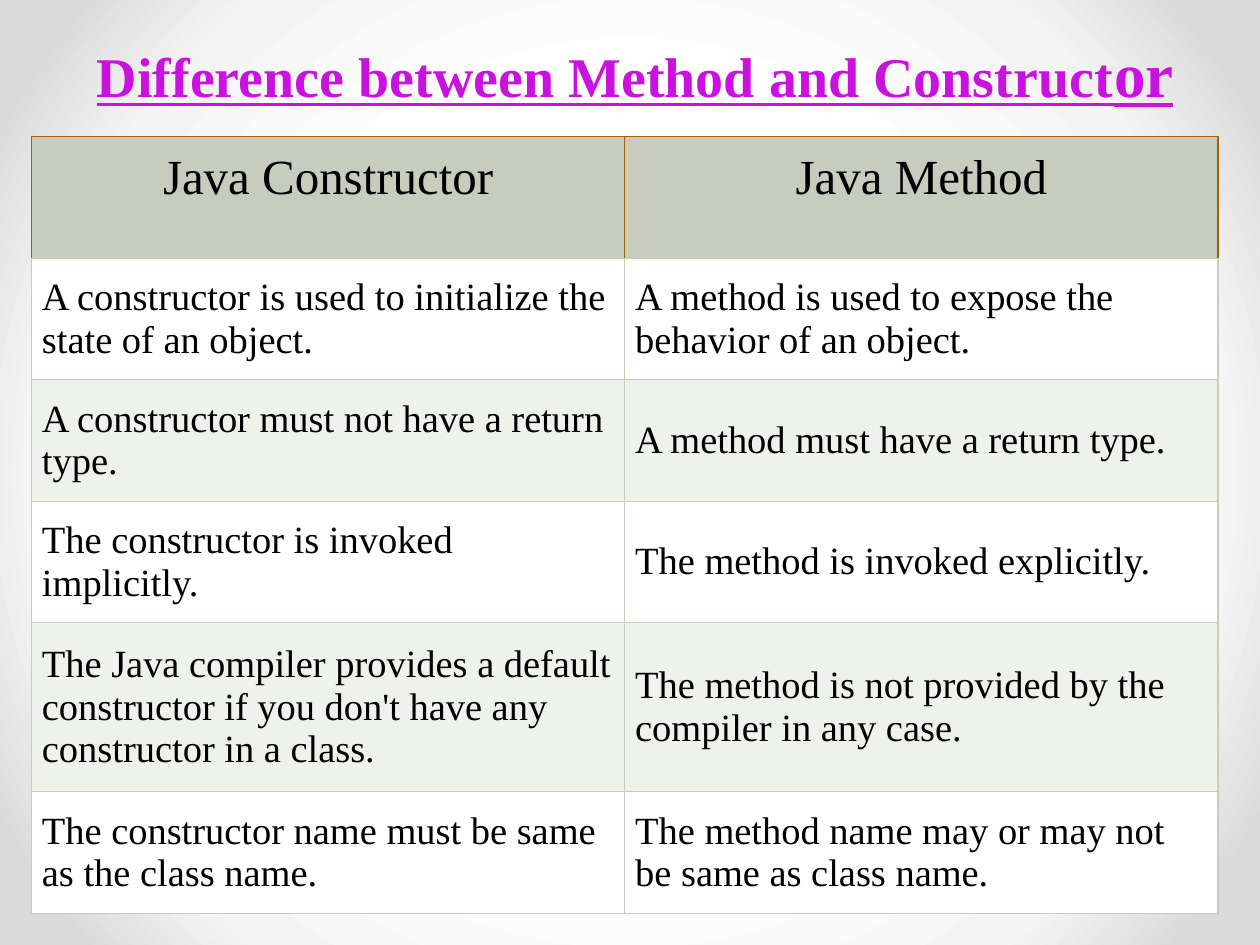
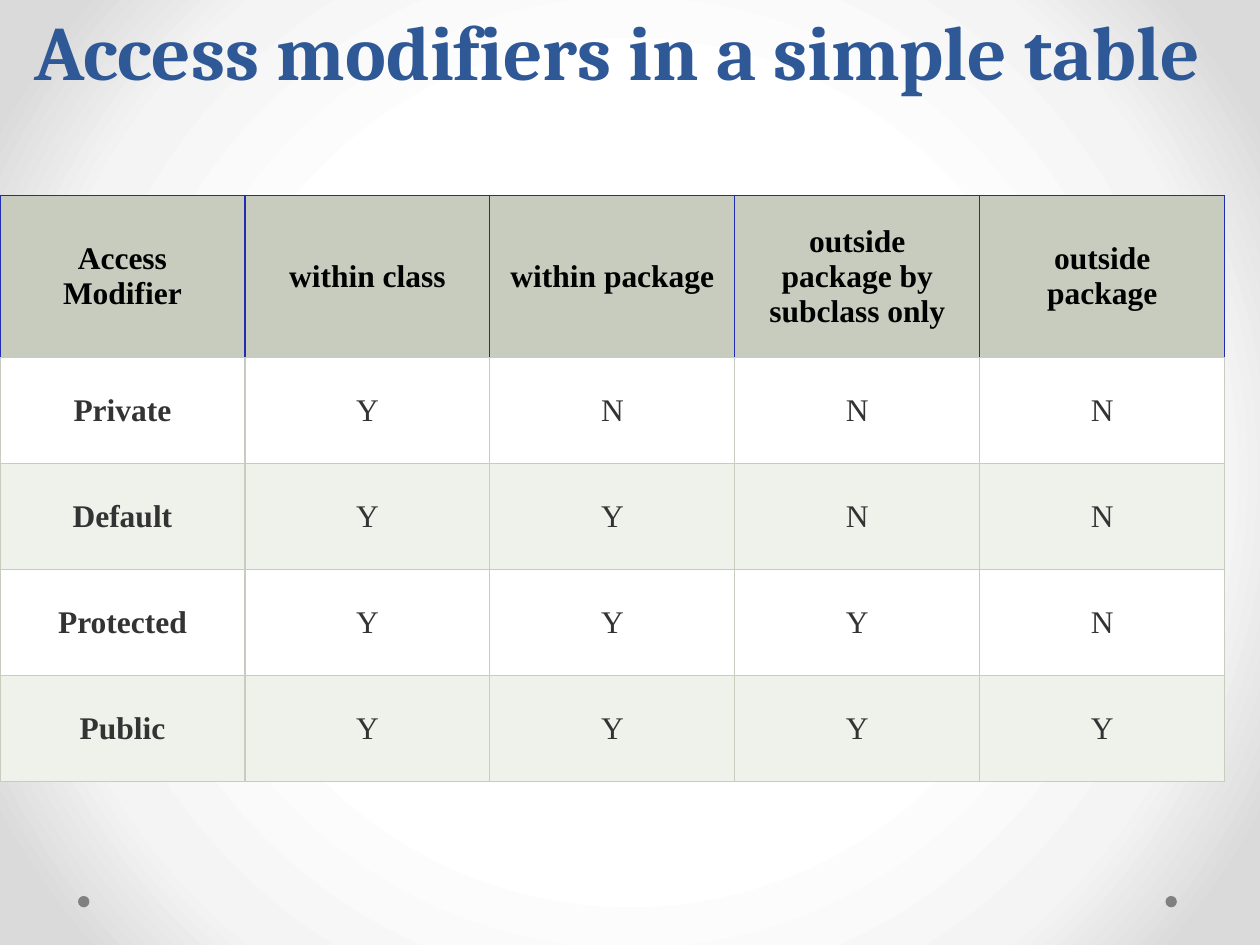
from dataclasses import dataclass

from lxml import etree
from pptx import Presentation
from pptx.dml.color import RGBColor
from pptx.enum.shapes import MSO_SHAPE
from pptx.enum.text import MSO_ANCHOR, MSO_AUTO_SIZE, PP_ALIGN
from pptx.oxml import parse_xml
from pptx.oxml.ns import nsdecls, qn
from pptx.util import Pt

OVAL = MSO_SHAPE.OVAL
TOP, MIDDLE, BOTTOM = MSO_ANCHOR.TOP, MSO_ANCHOR.MIDDLE, MSO_ANCHOR.BOTTOM
NO_FIT = MSO_AUTO_SIZE.NONE
LEFT, CENTER = PP_ALIGN.LEFT, PP_ALIGN.CENTER


@dataclass(frozen=True)
class Theme:
    serif: str = "Times New Roman"
    heading: str = "Cambria"
    black: str = "000000"
    gray_text: str = "333333"
    dot: str = "808080"
    header: str = "C7CCBE"
    bands: tuple = ("FFFFFF", "EFF1EB")
    magenta: str = "CB11DF"
    blue: str = "2F5897"
    brown_edge: str = "A05F09"
    blue_edge: str = "202DB0"
    backdrop: tuple = ((50, "FFFFFF"), (76, "F4F4F4"), (92, "DADADA"))
    title_small: int = 32
    title_accent: int = 36
    title_large: int = 44
    compare_header: int = 28
    compare_body: int = 22
    access: int = 18
    edge: float = 0.75


theme = Theme()


def set_font(p, name, size, color, bold=False):
    p.font.name = name
    p.font.size = Pt(size)
    p.font.color.rgb = RGBColor.from_string(color)
    p.font.bold = bold


def style_cell(cell, text, fill, inset, anchor, align, edges):
    cell.text = text
    cell.fill.solid()
    cell.fill.fore_color.rgb = RGBColor.from_string(fill)
    cell.vertical_anchor = anchor
    cell.margin_left = cell.margin_right = Pt(inset)
    cell.margin_top = cell.margin_bottom = Pt(inset)
    tc_pr = cell._tc.get_or_add_tcPr()
    for i, (side, color) in enumerate(zip(("lnL", "lnR", "lnT", "lnB"), edges)):
        tc_pr.insert(i, parse_xml(
            f'<a:{side} {nsdecls("a")} w="{Pt(theme.edge)}"><a:solidFill>'
            f'<a:srgbClr val="{color}"/></a:solidFill></a:{side}>'))
    p = cell.text_frame.paragraphs[0]
    p.alignment = align
    return p


prs = Presentation()
prs.slide_width, prs.slide_height = Pt(720), Pt(540)

master = prs.slide_master
master.background.fill.solid()
solid = next(master.element.cSld.iter(qn("a:solidFill")))
gradient = etree.Element(qn("a:gradFill"), rotWithShape="1")
stops = etree.SubElement(gradient, qn("a:gsLst"))
for pos, color in theme.backdrop:
    stop = etree.SubElement(stops, qn("a:gs"), pos=str(pos * 1000))
    etree.SubElement(stop, qn("a:srgbClr"), val=color)
focus = etree.SubElement(gradient, qn("a:path"), path="circle")
etree.SubElement(focus, qn("a:fillToRect"), l="50000", t="50000", r="50000", b="50000")
solid.getparent().replace(solid, parse_xml(etree.tostring(gradient)))

compare, access = [prs.slides.add_slide(prs.slide_layouts[5]) for _ in range(2)]

for x in (666, 44.6):
    dot = compare.shapes.add_shape(OVAL, Pt(x), Pt(512), Pt(6.5), Pt(6.5))
    dot.fill.solid()
    dot.fill.fore_color.rgb = RGBColor.from_string(theme.dot)
    dot.line.fill.background()
    dot.shadow.inherit = False
    master.shapes.element.append(dot.element)

titles = [
    (compare, (30, 12, 666, 73), TOP, theme.serif, theme.title_small, theme.magenta,
     ["Difference between Method and Construct", "or"]),
    (access, (0, 3.6, 706, 55), BOTTOM, theme.heading, theme.title_large, theme.blue,
     ["Access modifiers in a simple table"]),
]
for s, box, anchor, name, size, color, texts in titles:
    sp = s.shapes.title
    sp.left, sp.top, sp.width, sp.height = map(Pt, box)
    tf = sp.text_frame
    tf.auto_size = NO_FIT
    tf.word_wrap = True
    tf.vertical_anchor = anchor
    p = tf.paragraphs[0]
    p.alignment = CENTER
    set_font(p, name, size, color, True)
    for text in texts:
        r = p.add_run()
        r.text = text

tf = compare.shapes.title.text_frame
tf.margin_top = Pt(8)
p = tf.paragraphs[0]
p.font.underline = True
p.runs[1].font.size = Pt(theme.title_accent)
access.shapes.title.text_frame.paragraphs[0].line_spacing = Pt(58)

compare_rows = [
    ("Java Constructor", "Java Method"),
    ("A constructor is used to initialize the state of an object.",
     "A method is used to expose the behavior of an object."),
    ("A constructor must not have a return type.",
     "A method must have a return type."),
    ("The constructor is invoked implicitly.",
     "The method is invoked explicitly."),
    ("The Java compiler provides a default constructor if you don't have any "
     "constructor in a class.",
     "The method is not provided by the compiler in any case."),
    ("The constructor name must be same as the class name.",
     "The method name may or may not be same as class name."),
]
access_rows = [
    ("Access Modifier", "within class", "within package",
     "outside package by subclass only", "outside package"),
    ("Private", "Y", "N", "N", "N"),
    ("Default", "Y", "Y", "N", "N"),
    ("Protected", "Y", "Y", "Y", "N"),
    ("Public", "Y", "Y", "Y", "Y"),
]
tables = [
    (compare, compare_rows, (18, 78), 339, [69.5] * 4 + [96.5, 69.5], theme.brown_edge,
     8, TOP, LEFT, theme.compare_header, theme.compare_body, theme.black, False),
    (access, access_rows, (0, 111.5), 140, [93] + [60.5] * 4, theme.blue_edge,
     9, MIDDLE, CENTER, theme.access, theme.access, theme.gray_text, True),
]
for (s, rows, (x, y), col_width, heights, edge, header_inset, header_anchor,
     body_align, header_size, body_size, body_color, bold_labels) in tables:
    cols = len(rows[0])
    table = s.shapes.add_table(len(rows), cols, Pt(x), Pt(y),
                               Pt(col_width * cols), Pt(sum(heights))).table
    table.first_row = table.horz_banding = False
    for col in table.columns:
        col.width = Pt(col_width)
    for i, (texts, height) in enumerate(zip(rows, heights)):
        table.rows[i].height = Pt(height)
        for j, text in enumerate(texts):
            cell = table.cell(i, j)
            if i == 0:
                p = style_cell(cell, text, theme.header, header_inset, header_anchor,
                               CENTER, [edge] * 3 + [theme.header])
                set_font(p, theme.serif, header_size, theme.black, bold_labels)
            else:
                p = style_cell(cell, text, theme.bands[(i - 1) % 2], 6, MIDDLE,
                               body_align, [theme.header] * 4)
                set_font(p, theme.serif, body_size, body_color, bold_labels and j == 0)

prs.save("out.pptx")
